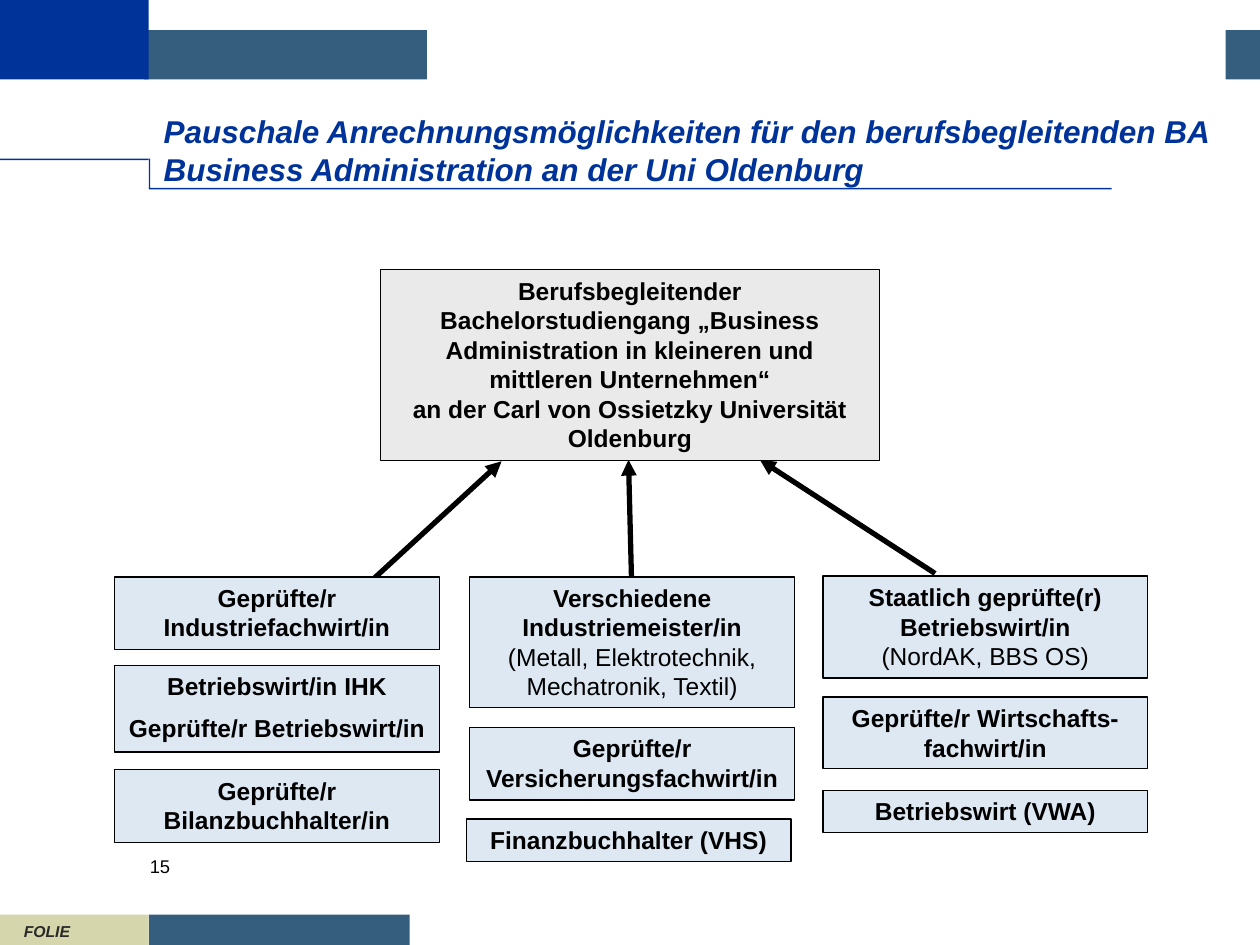
import pptx
import pptx.util
import pptx.dml.color
import pptx.enum.shapes
import pptx.enum.text
import pptx.oxml.ns
from dataclasses import dataclass
from lxml import etree
from pptx.util import Cm, Pt


@dataclass(frozen=True)
class Theme:
    font: str = "Arial"
    blue: str = "003399"
    steel: str = "355D7E"
    sand: str = "D6D6AD"
    white: str = "FFFFFF"
    black: str = "000000"
    footer: str = "292929"
    degree_fill: str = "EAEAEA"
    entry_fill: str = "DDE8F3"
    title_size: float = 18
    box_size: float = 14
    number_size: float = 10.5
    footer_size: float = 9
    border: float = 0.75
    arrow: float = 3


THEME = Theme()

TITLE = ("Pauschale Anrechnungsmöglichkeiten für den berufsbegleitenden BA "
         "Business Administration an der Uni Oldenburg")
DEGREE = ("Berufsbegleitender Bachelorstudiengang „Business Administration in "
          "kleineren und mittleren Unternehmen“\n"
          "an der Carl von Ossietzky Universität\nOldenburg")

# Left, top, width, height in centimetres, then the fill
DECORATION = [
    (2.9, 0.61, 22.5, 0.99, THEME.steel),
    (8.61, 0, 10.9, 2.13, THEME.white),
    (0, 0, 3, 1.6, THEME.blue),
    (3, 18.44, 5.26, 0.61, THEME.steel),
    (0, 18.44, 3, 0.61, THEME.sand),
    (0, 3.2, 3, 0.03, THEME.blue),
    (3, 3.79, 19.41, 0.03, THEME.blue),
    (3, 3.2, 0.03, 0.61, THEME.blue),
    (18.11, 0, 6.6, 2.13, THEME.white),
]

# Each entry: left, top, height, bold paragraphs, regular closing line
ENTRY_WIDTH = 6.55
LEFT, MIDDLE, RIGHT = 2.31, 9.47, 16.59
ENTRIES = [
    (LEFT, 11.63, 1.47, ["Geprüfte/r Industriefachwirt/in"], ""),
    (LEFT, 13.41, 1.75, ["Betriebswirt/in IHK", "Geprüfte/r Betriebswirt/in"], ""),
    (LEFT, 15.52, 1.47, ["Geprüfte/r Bilanzbuchhalter/in"], ""),
    (MIDDLE, 11.63, 2.64, ["Verschiedene Industriemeister/in\n"],
     "(Metall, Elektrotechnik, Mechatronik, Textil)"),
    (MIDDLE, 14.66, 1.47, ["Geprüfte/r Versicherungsfachwirt/in"], ""),
    (9.4, 16.51, 0.86, ["Finanzbuchhalter (VHS)"], ""),
    (RIGHT, 11.61, 2.06, ["Staatlich geprüfte(r)\nBetriebswirt/in\n"],
     "(NordAK, BBS OS)"),
    (RIGHT, 14.05, 1.45, ["Geprüfte/r Wirtschafts-\nfachwirt/in"], ""),
    (RIGHT, 15.93, 0.86, ["Betriebswirt (VWA)"], ""),
]

# Start x, start y, tip x, tip y
ARROWS = [
    (7.54, 11.66, 10.11, 9.3),
    (12.73, 11.66, 12.67, 9.27),
    (18.85, 11.56, 15.32, 9.27),
]


def rgb(value):
    return pptx.dml.color.RGBColor.from_string(value)


def add_rectangle(slide, left, top, width, height, fill):
    shape = slide.shapes.add_shape(
        pptx.enum.shapes.MSO_SHAPE.RECTANGLE, Cm(left), Cm(top), Cm(width), Cm(height))
    shape.shadow.inherit = False
    shape.fill.solid()
    shape.fill.fore_color.rgb = rgb(fill)
    shape.line.fill.background()
    return shape


def set_font(font, size, color, bold=None, italic=None):
    font.name = THEME.font
    font.size = Pt(size)
    font.color.rgb = rgb(color)
    font.bold = bold
    font.italic = italic


def add_lines(para, text):
    """Add text to the paragraph, turning each newline into a line break."""
    spans = []
    for index, line in enumerate(text.split("\n")):
        if index:
            para.add_line_break()
        if line:
            span = para.add_run()
            span.text = line
            spans.append(span)
    return spans


def add_box(slide, left, top, width, height, fill, paragraphs, closing=""):
    box = add_rectangle(slide, left, top, width, height, fill)
    box.line.color.rgb = rgb(THEME.black)
    box.line.width = Pt(THEME.border)
    frame = box.text_frame
    frame.word_wrap = True
    frame.auto_size = pptx.enum.text.MSO_AUTO_SIZE.SHAPE_TO_FIT_TEXT
    frame.vertical_anchor = pptx.enum.text.MSO_ANCHOR.TOP
    for index, text in enumerate(paragraphs):
        para = frame.add_paragraph() if index else frame.paragraphs[0]
        para.alignment = pptx.enum.text.PP_ALIGN.CENTER
        if index:
            para.space_before = Pt(THEME.box_size / 2)
        set_font(para.font, THEME.box_size, THEME.black, bold=True)
        add_lines(para, text)
    for span in add_lines(para, closing):
        span.font.bold = False


def add_label(slide, left, top, width, height, text, size, color,
              emphasis=None, anchored_bottom=False):
    """Add a text box; bottom-anchored labels have no inner margins."""
    label = slide.shapes.add_textbox(Cm(left), Cm(top), Cm(width), Cm(height))
    frame = label.text_frame
    frame.word_wrap = True
    if anchored_bottom:
        frame.vertical_anchor = pptx.enum.text.MSO_ANCHOR.BOTTOM
        frame.margin_left = frame.margin_right = 0
        frame.margin_top = frame.margin_bottom = 0
    para = frame.paragraphs[0]
    set_font(para.font, size, color, emphasis, emphasis)
    add_lines(para, text)


def add_arrow(slide, start_x, start_y, tip_x, tip_y):
    arrow = slide.shapes.add_connector(
        pptx.enum.shapes.MSO_CONNECTOR.STRAIGHT,
        Cm(start_x), Cm(start_y), Cm(tip_x), Cm(tip_y))
    arrow.line.color.rgb = rgb(THEME.black)
    arrow.line.width = Pt(THEME.arrow)
    qn = pptx.oxml.ns.qn
    etree.SubElement(arrow.line._get_or_add_ln(), qn("a:tailEnd"), type="triangle")
    etree.SubElement(arrow._element.spPr, qn("a:effectLst"))


def main():
    deck = pptx.Presentation()
    deck.slide_width, deck.slide_height = Cm(25.4), Cm(19.05)
    slide = deck.slides.add_slide(deck.slide_layouts[6])

    for part in DECORATION:
        add_rectangle(slide, *part)
    add_label(slide, 0.48, 18.59, 1.63, 0.38, "FOLIE", THEME.footer_size,
              THEME.footer, emphasis=True, anchored_bottom=True)
    add_label(slide, 2.77, 17.12, 1.04, 0.89, "15", THEME.number_size, THEME.black)

    for arrow in ARROWS:
        add_arrow(slide, *arrow)
    add_box(slide, 7.67, 5.44, 10.06, 3.84, THEME.degree_fill, [DEGREE])
    for left, top, height, paragraphs, closing in ENTRIES:
        add_box(slide, left, top, ENTRY_WIDTH, height, THEME.entry_fill,
                paragraphs, closing)
    add_label(slide, 3.3, 1.93, 21.59, 1.85, TITLE, THEME.title_size,
              THEME.blue, emphasis=True, anchored_bottom=True)

    deck.save("out.pptx")


if __name__ == "__main__":
    main()
